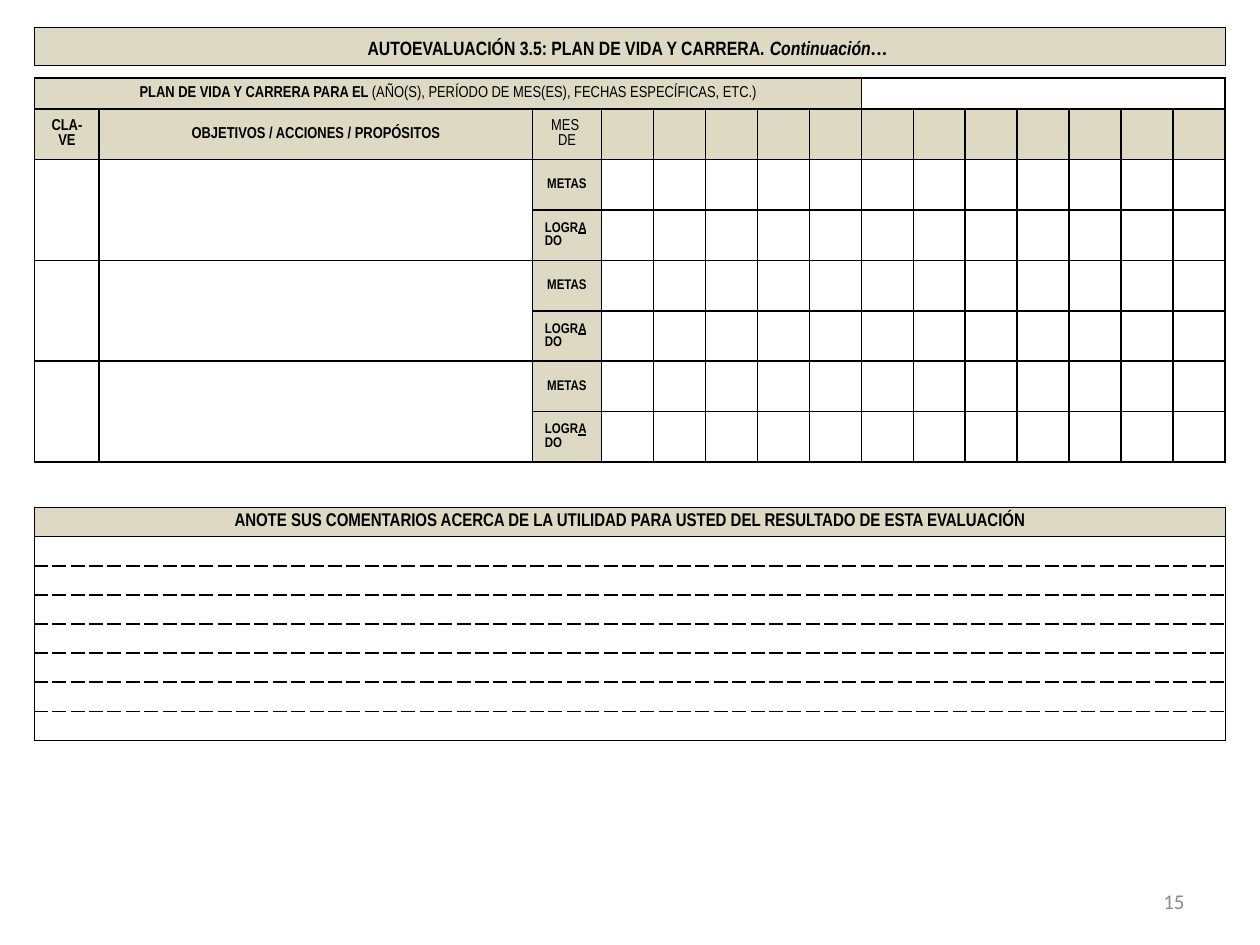
from pptx import Presentation
from pptx import util as u
from pptx.dml.color import RGBColor
from pptx.enum import shapes, text
from pptx.oxml.ns import qn
from lxml import etree

Pt = u.Pt
HUE = {"ink": "000000", "tan": "DDD9C3", "white": "FFFFFF", "gray": "8C8C8C"}
NARROW, MID = "Arial Narrow", text.MSO_ANCHOR.MIDDLE
AL = {"l": text.PP_ALIGN.LEFT, "c": text.PP_ALIGN.CENTER, "r": text.PP_ALIGN.RIGHT}
BOLD, UNDER = {"bold": True}, {"bold": True, "underline": True}

TITLE = [[
    ("AUTOEVALUACIÓN 3.5: PLAN DE VIDA Y CARRERA. ", BOLD),
    ("Continuación", {"bold": True, "italic": True}),
    ("... ", {"bold": True, "italic": True, "size": Pt(12), "name": "Calibri"}),
]]
PERIOD = [[
    ("PLAN DE VIDA Y CARRERA PARA EL ", BOLD),
    ("(AÑO(S), PERÍODO DE MES(ES), FECHAS ESPECÍFICAS, ETC.)", {}),
]]
HEADS = [
    [[("CLA-VE", BOLD)]],
    [[("OBJETIVOS / ACCIONES / PROPÓSITOS", BOLD)]],
    [[("MES ", {})], [("DE", {})]],
]
GOAL = [[("METAS", BOLD)]]
DONE = [[("LOGR", BOLD), ("A", UNDER)], [("DO", BOLD)]]
NOTE = [[("ANOTE SUS COMENTARIOS ACERCA DE LA UTILIDAD PARA USTED "
          "DEL RESULTADO DE ESTA EVALUACIÓN", BOLD)]]
PAGE = [[("15", {})]]

LEFT, WIDE = 19.8, 680.4
MONTHS, PLANS, LINES = 12, 3, 7
COLS = [36.9, 247.5, 39.6] + [29.7] * MONTHS
ROWS = [17.6] + [28.85] * (1 + 2 * PLANS)


def rgb(key):
    return RGBColor.from_string(HUE[key])


def write(frame, paras, size, al="c", font=NARROW, hue="ink"):
    for i, runs in enumerate(paras):
        para = frame.paragraphs[0] if i == 0 else frame.add_paragraph()
        para.alignment = AL[al]
        for words, fmt in runs:
            run = para.add_run()
            run.text = words
            base = {"size": Pt(size), "name": font, "bold": False}
            for key, val in {**base, **fmt}.items():
                setattr(run.font, key, val)
            run.font.color.rgb = rgb(hue)


def edge(cell, dashed=""):
    props = cell._tc.get_or_add_tcPr()
    for side in "LRTB":
        line = etree.SubElement(props, qn("a:ln" + side), w=str(Pt(1)))
        fill = etree.SubElement(line, qn("a:solidFill"))
        etree.SubElement(fill, qn("a:srgbClr"), val=HUE["ink"])
        kind = "sysDash" if side in dashed else "solid"
        etree.SubElement(line, qn("a:prstDash"), val=kind)


def paint(cell, hue):
    cell.fill.solid()
    cell.fill.fore_color.rgb = rgb(hue)


def grid(top, cols, rows):
    box = slide.shapes.add_table(len(rows), len(cols), Pt(LEFT), Pt(top),
                                 Pt(sum(cols)), Pt(sum(rows)))
    tab = box.table
    tab.first_row = tab.horz_banding = False
    for col, size in zip(tab.columns, cols):
        col.width = Pt(size)
    for row, size in zip(tab.rows, rows):
        row.height = Pt(size)
    for cell in tab.iter_cells():
        cell.vertical_anchor = MID
        cell.margin_top = cell.margin_bottom = Pt(2)
        para = cell.text_frame.paragraphs[0]._p
        etree.SubElement(para, qn("a:endParaRPr"), sz="800")
    return tab


deck = Presentation()
deck.slide_width, deck.slide_height = Pt(720), Pt(540)
slide = deck.slides.add_slide(deck.slide_layouts[6])

page = slide.shapes.add_textbox(Pt(516), Pt(500.5), Pt(168), Pt(28.75)).text_frame
page.word_wrap, page.vertical_anchor = True, MID
write(page, PAGE, 12, "r", "Calibri", "gray")

notes = grid(290, [WIDE], [16.65] * (LINES + 1))
for i, cell in enumerate(notes.iter_cells()):
    edge(cell, ("T" if i > 1 else "") + ("B" if 0 < i < LINES else ""))
    paint(cell, "white" if i else "tan")
write(notes.cell(0, 0).text_frame, NOTE, 10.5)

bar = slide.shapes.add_shape(shapes.MSO_SHAPE.RECTANGLE,
                             Pt(LEFT), Pt(15.75), Pt(WIDE), Pt(21.8))
bar.shadow.inherit = False
bar.fill.solid()
bar.fill.fore_color.rgb = rgb("tan")
bar.line.color.rgb = rgb("ink")
bar.line.width = Pt(0.75)
bar.text_frame.word_wrap, bar.text_frame.vertical_anchor = True, MID
write(bar.text_frame, TITLE, 11)

plan = grid(44.7, COLS, ROWS)
for r in range(len(ROWS)):
    for c in range(len(COLS)):
        cell = plan.cell(r, c)
        edge(cell)
        tan = r == 1 or (r == 0 and c < 8) or (r > 1 and c == 2)
        paint(cell, "tan" if tan else "white")
plan.cell(0, 0).merge(plan.cell(0, 7))
plan.cell(0, 8).merge(plan.cell(0, len(COLS) - 1))
write(plan.cell(0, 0).text_frame, PERIOD, 9)
for c, head in enumerate(HEADS):
    write(plan.cell(1, c).text_frame, head, 9)
for r in range(2, len(ROWS), 2):
    for c in (0, 1):
        plan.cell(r, c).merge(plan.cell(r + 1, c))
    write(plan.cell(r, 2).text_frame, GOAL, 8)
    write(plan.cell(r + 1, 2).text_frame, DONE, 8, "l")

deck.save("out.pptx")
